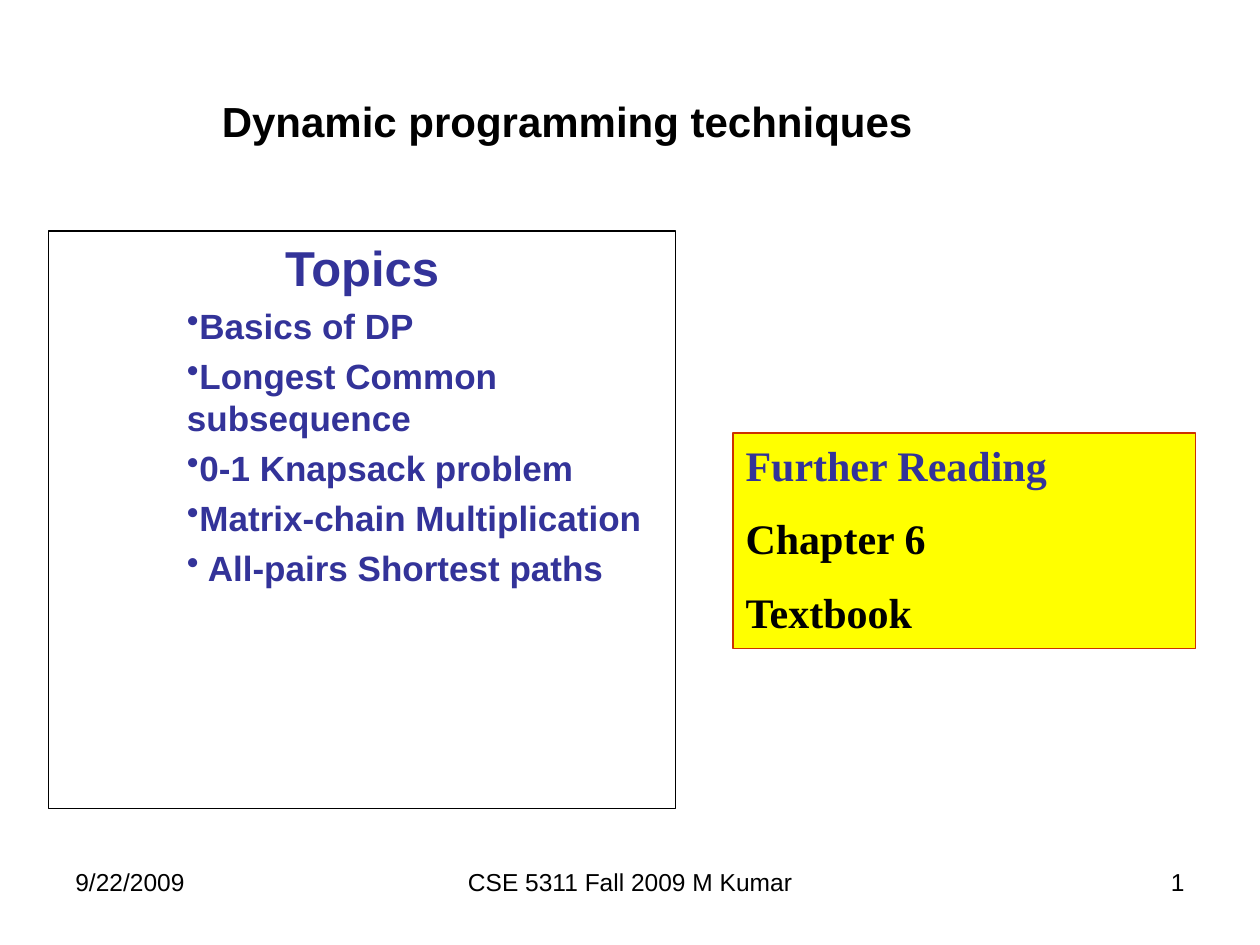
from lxml.etree import SubElement
from pptx import Presentation
from pptx.dml.color import RGBColor
from pptx.enum.shapes import MSO_SHAPE
from pptx.enum.text import MSO_ANCHOR, PP_ALIGN
from pptx.oxml.ns import qn
from pptx.util import Cm, Pt

COLORS = {
    "black": "000000",
    "white": "FFFFFF",
    "indigo": "333399",
    "yellow": "FFFF00",
    "red": "CC3300",
}


class SlideBuilder:
    sans = "Arial"
    serif = "Times New Roman"

    def __init__(self, slide):
        self.slide = slide

    def color(self, name):
        return RGBColor.from_string(COLORS[name])

    def text_box(self, x, y, w, h):
        sp = self.slide.shapes.add_textbox(Cm(x), Cm(y), Cm(w), Cm(h))
        sp.text_frame.word_wrap = True
        return sp.text_frame

    def panel(self, x, y, w, h, fill, line):
        sp = self.slide.shapes.add_shape(
            MSO_SHAPE.RECTANGLE, Cm(x), Cm(y), Cm(w), Cm(h))
        sp.shadow.inherit = False
        sp.fill.solid()
        sp.fill.fore_color.rgb = self.color(fill)
        sp.line.color.rgb = self.color(line)
        sp.line.width = Pt(0.75)
        tf = sp.text_frame
        tf.word_wrap = True
        tf.vertical_anchor = MSO_ANCHOR.TOP
        return tf

    def paragraph(self, tf, text, size, color="black", font=sans, bold=True,
                  align=PP_ALIGN.LEFT, before=0):
        # The first text fills the paragraph that every frame starts with
        p = tf.add_paragraph() if tf.text else tf.paragraphs[0]
        p.text = text
        p.alignment = align
        p.space_before = Pt(before)
        for r in p.runs:
            r.font.name = font
            r.font.size = Pt(size)
            r.font.bold = bold
            r.font.color.rgb = self.color(color)
        return p

    def bullet(self, tf, text, size, color, before):
        p = self.paragraph(tf, text, size, color, before=before)
        pPr = p._p.get_or_add_pPr()
        pPr.set("marL", str(Cm(2.54)))
        pPr.set("indent", "0")
        SubElement(pPr, qn("a:buChar")).set("char", "•")


def main():
    prs = Presentation()
    prs.slide_width, prs.slide_height = Cm(25.4), Cm(19.05)
    s = SlideBuilder(prs.slides.add_slide(prs.slide_layouts[6]))

    # Footer
    for x, w, text, align in (
        (1.27, 5.93, "9/22/2009", PP_ALIGN.LEFT),
        (8.68, 8.05, "CSE 5311 Fall 2009 M Kumar", PP_ALIGN.CENTER),
        (18.2, 5.93, "1", PP_ALIGN.RIGHT),
    ):
        s.paragraph(s.text_box(x, 17.35, w, 1.32), text, 14,
                    bold=False, align=align)

    # Title
    title = s.text_box(0.64, 0.85, 21.59, 3.18)
    title.vertical_anchor = MSO_ANCHOR.MIDDLE
    s.paragraph(title, "Dynamic programming techniques", 24,
                align=PP_ALIGN.CENTER)

    # Topics
    topics = s.panel(0.98, 4.66, 12.64, 11.64, "white", "black")
    s.paragraph(topics, "Topics", 28, "indigo", align=PP_ALIGN.CENTER)
    for text in ("Basics of DP", "Longest Common subsequence",
                 "0-1 Knapsack problem", "Matrix-chain Multiplication",
                 " All-pairs Shortest paths"):
        s.bullet(topics, text, 20, "indigo", before=4.6)

    # Further reading
    reading = s.panel(14.78, 8.73, 9.32, 4.35, "yellow", "red")
    s.paragraph(reading, "Further Reading", 24, "indigo", s.serif)
    for text in ("Chapter 6", "Textbook"):
        s.paragraph(reading, text, 24, font=s.serif, before=13.3)

    prs.save("out.pptx")


if __name__ == "__main__":
    main()
